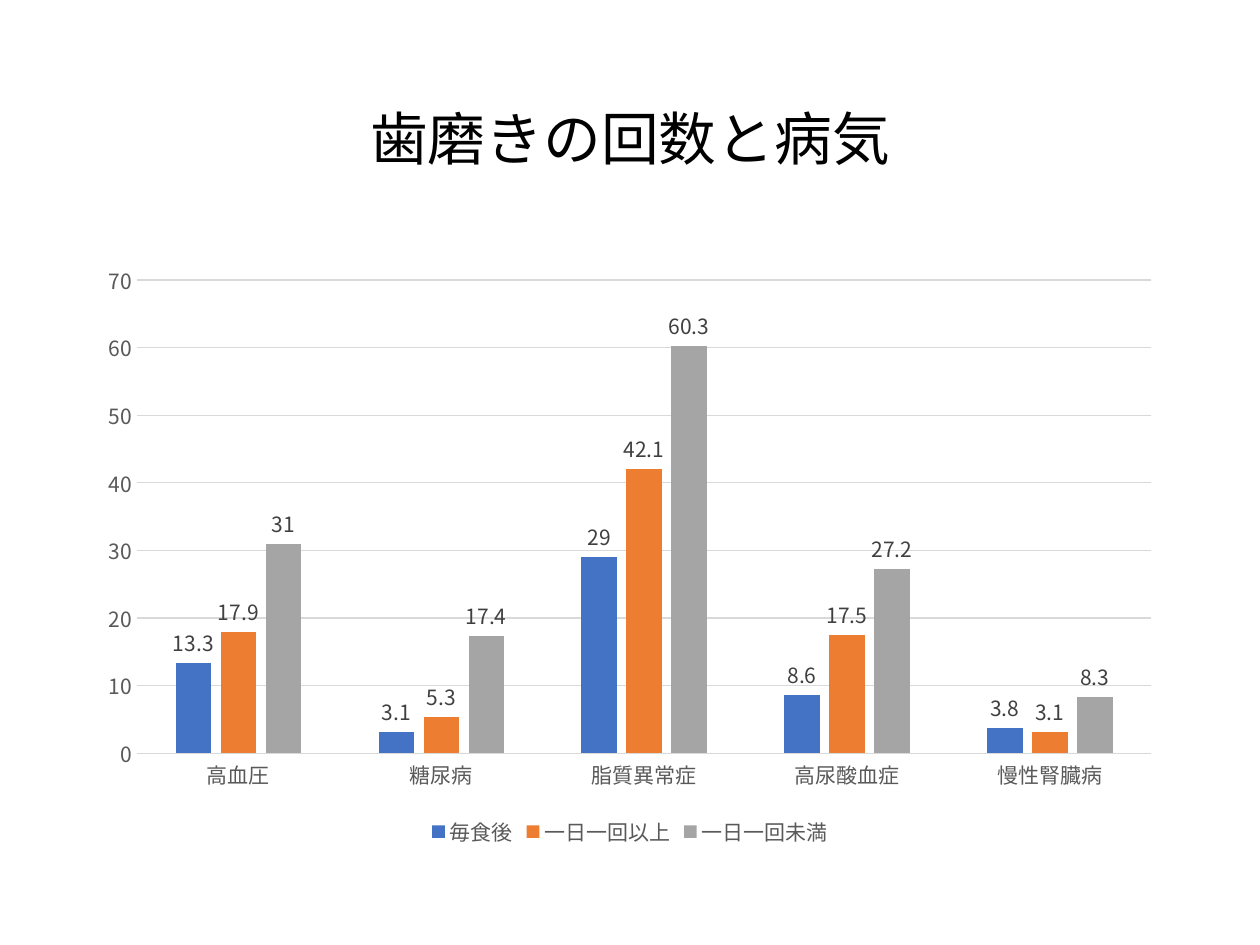
from dataclasses import dataclass
from pptx import Presentation
from pptx.chart.data import CategoryChartData as Data
from pptx.dml.color import RGBColor as Color
from pptx.enum.chart import XL_CHART_TYPE as Kind, XL_LABEL_POSITION as Spot
from pptx.enum.chart import XL_LEGEND_POSITION as Side, XL_TICK_MARK as Tick
from pptx.enum.text import MSO_ANCHOR as Anchor, PP_ALIGN as Align
from pptx.oxml.ns import qn
from pptx.util import Inches, Pt


@dataclass(frozen=True)
class Theme:
    face: str = "Noto Sans CJK JP"
    ink: str = "000000"
    soft: str = "595959"
    label: str = "404040"
    rule: str = "D9D9D9"
    bars: tuple = ("4472C4", "ED7D31", "A5A5A5")
    head: int = 33
    body: int = 12
    base: int = 10
    thin: float = 0.75


THEME = Theme()
WIDE, HIGH = Inches(10), Inches(7.5)
LEFT, SPAN = 0.069, 0.862
GROUPS = ("高血圧", "糖尿病", "脂質異常症", "高尿酸血症", "慢性腎臓病")
RATES = {
    "毎食後": (13.3, 3.1, 29, 8.6, 3.8),
    "一日一回以上": (17.9, 5.3, 42.1, 17.5, 3.1),
    "一日一回未満": (31, 17.4, 60.3, 27.2, 8.3),
}


def area(top, tall):
    return [round(n) for n in (LEFT * WIDE, top * HIGH, SPAN * WIDE, tall * HIGH)]


def style(font, size=THEME.body, color=THEME.soft):
    font.name = THEME.face
    font.size = Pt(size)
    font.bold = False
    font.color.rgb = Color.from_string(color)


def set_east(root):
    for latin in list(root.iter(qn("a:latin"))):
        east = latin.makeelement(qn("a:ea"), {"typeface": THEME.face})
        latin.addnext(east)


def rule(line):
    line.color.rgb = Color.from_string(THEME.rule)
    line.width = Pt(THEME.thin)


def write(shape, text, align=Align.CENTER, space=0.9, **look):
    frame = shape.text_frame
    frame.word_wrap = True
    frame.vertical_anchor = Anchor.MIDDLE
    para = frame.paragraphs[0]
    para.alignment = align
    para.line_spacing = space
    run = para.add_run()
    run.text = text
    style(run.font, **look)
    set_east(shape.element)


def add_title(slide, text):
    title = slide.shapes.title
    title.left, title.top, title.width, title.height = area(0.053, 0.193)
    write(title, text, size=THEME.head, color=THEME.ink)


def set_axes(chart):
    for axis in (chart.category_axis, chart.value_axis):
        axis.major_tick_mark = axis.minor_tick_mark = Tick.NONE
        style(axis.tick_labels.font)
    rule(chart.category_axis.format.line)
    value = chart.value_axis
    value.minimum_scale, value.maximum_scale, value.major_unit = 0, 70, 10
    value.format.line.fill.background()
    rule(value.major_gridlines.format.line)


def set_bars(plot):
    plot.gap_width, plot.overlap = 219, -27
    plot.vary_by_categories = False
    for bar, color in zip(plot.series, THEME.bars):
        bar.format.fill.solid()
        bar.format.fill.fore_color.rgb = Color.from_string(color)
        bar.invert_if_negative = False
        labels = bar.data_labels
        labels.show_value = True
        labels.position = Spot.OUTSIDE_END
        style(labels.font, color=THEME.label)


def add_bars(slide):
    data = Data()
    data.categories = GROUPS
    for name, rates in RATES.items():
        data.add_series(name, rates)
    frame = slide.shapes.add_chart(Kind.COLUMN_CLUSTERED, *area(0.267, 0.635), data)
    chart = frame.chart
    chart.has_title = False
    style(chart.font, size=THEME.base, color=THEME.ink)
    set_axes(chart)
    set_bars(chart.plots[0])
    chart.has_legend = True
    chart.legend.position = Side.BOTTOM
    chart.legend.include_in_layout = False
    style(chart.legend.font)
    set_east(chart.element)


def main():
    deck = Presentation()
    deck.slide_width, deck.slide_height = WIDE, HIGH
    slide = deck.slides.add_slide(deck.slide_layouts[5])
    add_title(slide, "歯磨きの回数と病気")
    add_bars(slide)
    deck.save("out.pptx")


if __name__ == "__main__":
    main()
